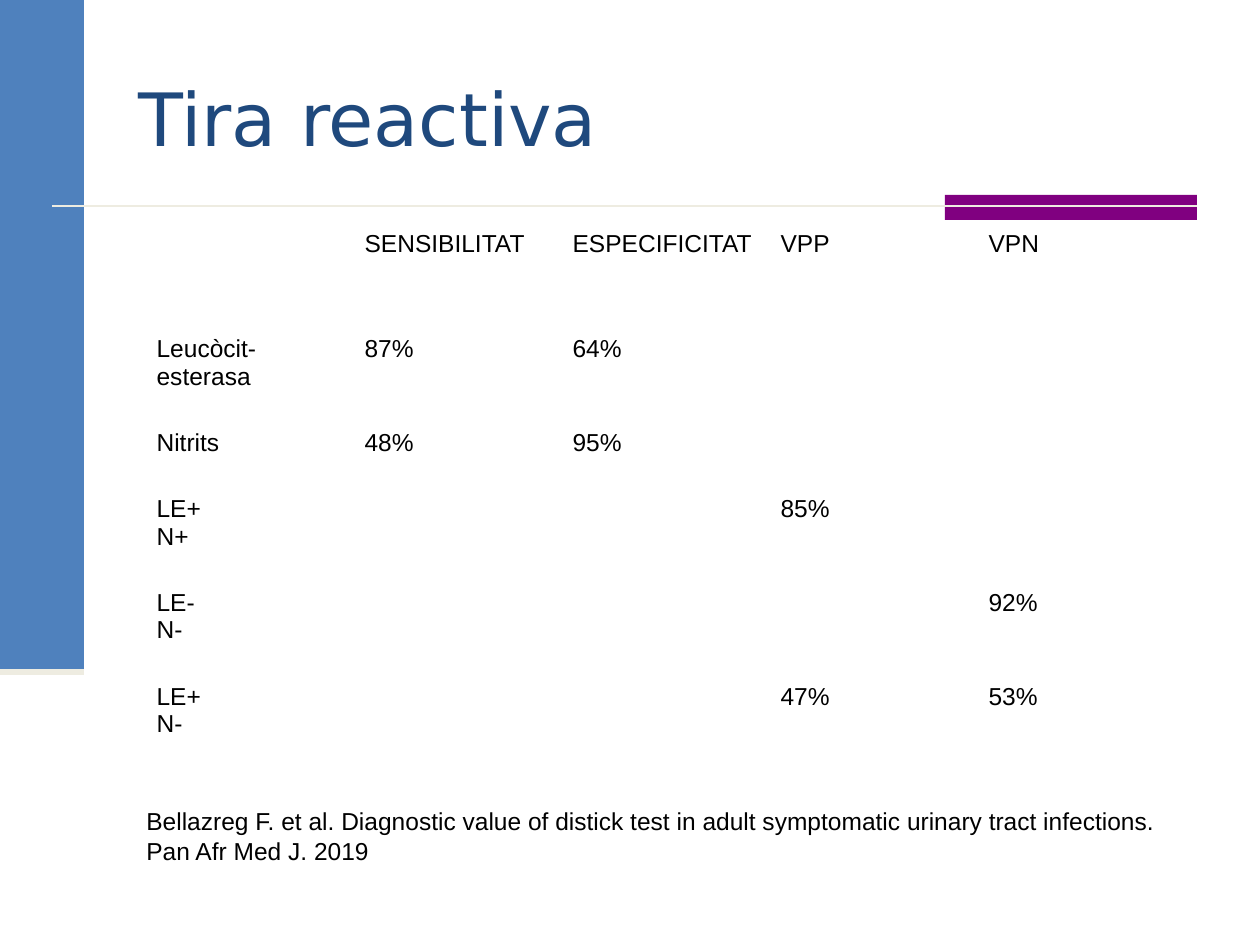
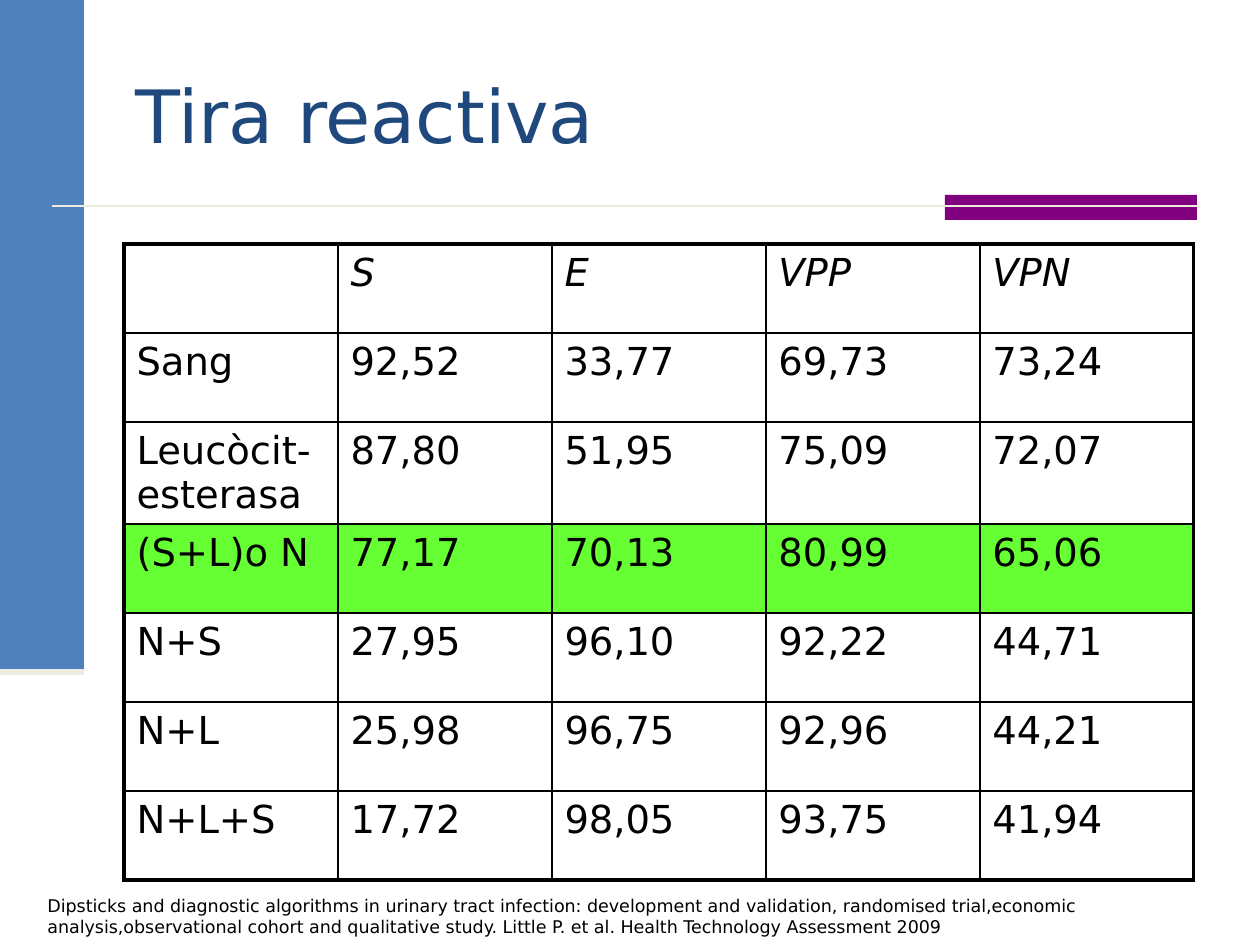
from lxml import etree
from pptx import Presentation
from pptx import util as u
from pptx.dml.color import RGBColor
from pptx.enum import shapes, text
from pptx.oxml import ns

# Shared style
SCALE = 914400 / 126  # EMU per px
BLUE = RGBColor(0x4F, 0x81, 0xBD)
NAVY = RGBColor(0x1F, 0x49, 0x7D)
PURPLE = RGBColor(0x80, 0x00, 0x80)
CREAM = RGBColor(0xEE, 0xEC, 0xE1)
BLACK = RGBColor(0x00, 0x00, 0x00)
GREEN = RGBColor(0x66, 0xFF, 0x33)
SANS = "DejaVu Sans"
ARIAL = "Arial"
TITLE_ONLY = 5
OUTER, INNER = 2.25, 1


def px(*lengths):
    return [u.Emu(round(n * SCALE)) for n in lengths]


class Deck:
    def __init__(self):
        self.prs = Presentation()
        self.prs.slide_width, self.prs.slide_height = px(1260, 945)
        self.s = None

    def slide(self, title, box):
        self.s = self.prs.slides.add_slide(self.prs.slide_layouts[TITLE_ONLY])
        self.band(0, 0, 84, 672, BLUE)
        self.band(945, 195, 252, 25, PURPLE)
        self.line(52, 206, 1197, 206, 1.5)
        self.line(0, 672, 84, 672, 3.5)
        self.title(title, box)

    def title(self, words, box):
        sp = self.s.shapes.title
        sp.left, sp.top, sp.width, sp.height = px(*box)
        tf = sp.text_frame
        tf.auto_size = text.MSO_AUTO_SIZE.NONE
        tf.vertical_anchor = text.MSO_ANCHOR.MIDDLE
        tf.paragraphs[0].alignment = text.PP_ALIGN.LEFT
        self.run(tf.paragraphs[0], words, 42, SANS, NAVY)

    def run(self, p, words, size, font, color=BLACK, italic=False):
        r = p.add_run()
        r.text = words
        r.font.size, r.font.name, r.font.italic = u.Pt(size), font, italic
        r.font.color.rgb = color

    def band(self, x, y, w, h, color):
        sp = self.s.shapes.add_shape(shapes.MSO_SHAPE.RECTANGLE, *px(x, y, w, h))
        sp.shadow.inherit = False
        sp.fill.solid()
        sp.fill.fore_color.rgb = color
        sp.line.fill.background()

    def line(self, x1, y1, x2, y2, width):
        cx = self.s.shapes.add_connector(
            shapes.MSO_CONNECTOR.STRAIGHT, *px(x1, y1, x2, y2))
        cx.line.color.rgb = CREAM
        cx.line.width = u.Pt(width)
        etree.SubElement(cx._element.spPr, ns.qn("a:effectLst"))

    def note(self, words, box, size, font):
        tf = self.s.shapes.add_textbox(*px(*box)).text_frame
        tf.word_wrap = True
        tf.auto_size = text.MSO_AUTO_SIZE.SHAPE_TO_FIT_TEXT
        self.run(tf.paragraphs[0], words, size, font)

    def table(self, rows, x, y, col_width, heights, size, font,
              italic_head=False, marked_row=None, ruled=False):
        n_rows, n_cols = len(rows), len(rows[0])
        frame = self.s.shapes.add_table(
            n_rows, n_cols, *px(x, y, col_width * n_cols, sum(heights)))
        table = frame.table
        table.first_row = table.horz_banding = False
        for col in table.columns:
            col.width = px(col_width)[0]
        for i, (row, height) in enumerate(zip(rows, heights)):
            table.rows[i].height = px(height)[0]
            for j, words in enumerate(row):
                cell = table.cell(i, j)
                if i == marked_row:
                    cell.fill.solid()
                    cell.fill.fore_color.rgb = GREEN
                else:
                    cell.fill.background()
                self.cell_text(cell, words, size, font, italic_head and i == 0)
                if ruled:
                    edges = (j == 0, j == n_cols - 1, i == 0, i == n_rows - 1)
                    self.borders(cell, edges)

    def cell_text(self, cell, words, size, font, italic):
        tf = cell.text_frame
        for k, part in enumerate(words.split("\n")):
            p = tf.add_paragraph() if k else tf.paragraphs[0]
            if part:
                self.run(p, part, size, font, italic=italic)

    def borders(self, cell, edges):
        """Edges tell whether left, right, top and bottom lie on the frame."""
        tc_pr = cell._tc.get_or_add_tcPr()
        for k, (side, outer) in enumerate(zip("LRTB", edges)):
            ln = etree.Element(ns.qn(f"a:ln{side}"))
            ln.set("w", str(u.Pt(OUTER if outer else INNER)))
            fill = etree.SubElement(ln, ns.qn("a:solidFill"))
            etree.SubElement(fill, ns.qn("a:srgbClr")).set("val", str(BLACK))
            tc_pr.insert(k, ln)


def main():
    deck = Deck()

    # Slide 1: sensitivity and predictive values of the strip
    deck.slide("Tira reactiva", (126, 38, 1071, 158))
    strip_values = [
        ("", "SENSIBILITAT", "ESPECIFICITAT", "VPP", "VPN"),
        ("Leucòcit-esterasa", "87%", "64%", "", ""),
        ("Nitrits", "48%", "95%", "", ""),
        ("LE+\nN+", "", "", "85%", ""),
        ("LE-\nN-", "", "", "", "92%"),
        ("LE+\nN-", "", "", "47%", "53%"),
    ]
    deck.table(strip_values, 144, 224, 208, [105, 94, 66, 94, 94, 94], 14, ARIAL)
    deck.note("Bellazreg F. et al. Diagnostic value of distick test in adult "
              "symptomatic urinary tract infections. Pan Afr Med J. 2019",
              (134, 800, 1062, 72), 14, ARIAL)

    # Slide 2: combinations of blood, leukocytes and nitrites
    deck.slide("Tira reactiva", (123, 35, 1075, 158))
    combinations = [
        ("", "S", "E", "VPP", "VPN"),
        ("Sang", "92,52", "33,77", "69,73", "73,24"),
        ("Leucòcit-esterasa", "87,80", "51,95", "75,09", "72,07"),
        ("(S+L)o N", "77,17", "70,13", "80,99", "65,06"),
        ("N+S", "27,95", "96,10", "92,22", "44,71"),
        ("N+L", "25,98", "96,75", "92,96", "44,21"),
        ("N+L+S", "17,72", "98,05", "93,75", "41,94"),
    ]
    deck.table(combinations, 124, 244, 214, [89] * len(combinations), 22, SANS,
               italic_head=True, marked_row=3, ruled=True)
    deck.note("Dipsticks and diagnostic algorithms in urinary tract infection: "
              "development and validation, randomised trial,economic "
              "analysis,observational cohort and qualitative study. "
              "Little P. et al. Health Technology Assessment 2009",
              (35, 889, 1171, 54), 10, SANS)

    deck.prs.save("out.pptx")


if __name__ == "__main__":
    main()
